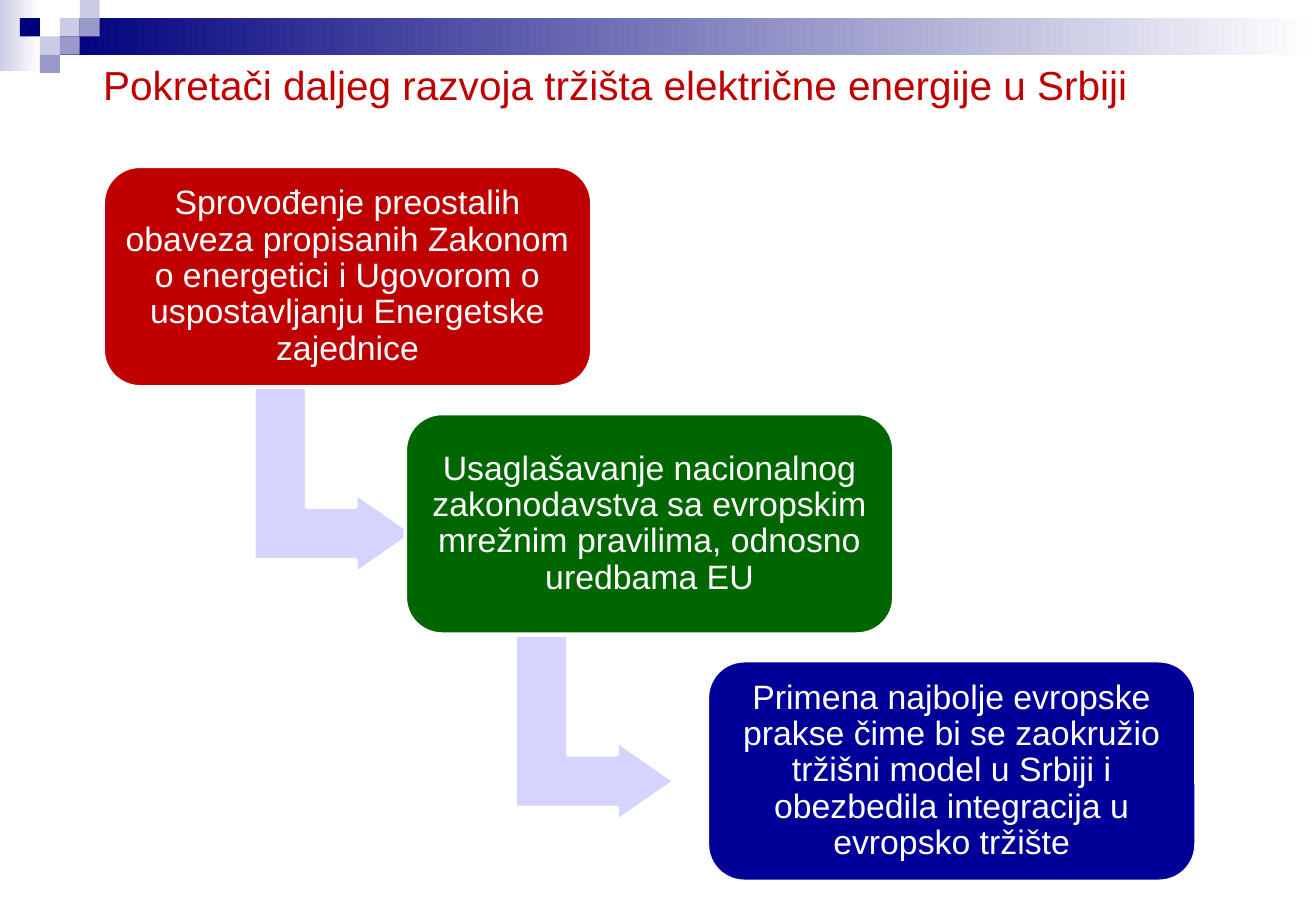
from dataclasses import dataclass

import pptx
import pptx.dml.color
import pptx.enum.shapes
import pptx.enum.text
import pptx.util
from pptx.shapes.autoshape import Shape
from pptx.slide import Slide
from pptx.text.text import TextFrame

SHAPES = pptx.enum.shapes.MSO_SHAPE
SLIDE_W = pptx.util.Inches(10.83)
SLIDE_H = pptx.util.Inches(7.5)
COLS, ROWS = 66, 50


@dataclass(frozen=True)
class Theme:
    font: str = "Arial"
    title_size: int = 24
    step_size: int = 20
    outline: int = 2
    white: str = "FFFFFF"
    navy: str = "00007D"
    pale: str = "CCCCE6"
    mid: str = "9999CC"
    red: str = "C00000"
    green: str = "006600"
    blue: str = "000099"
    arrow: str = "D4D4FF"


@dataclass(frozen=True)
class Cell:
    col: float
    row: float
    cols: float = 1
    rows: float = 1

    def shifted(self, cols: float, rows: float) -> "Cell":
        return Cell(self.col + cols, self.row + rows, self.cols, self.rows)

    def frame(self) -> tuple[int, int, int, int]:
        return (
            round(SLIDE_W * self.col / COLS),
            round(SLIDE_H * self.row / ROWS),
            round(SLIDE_W * self.cols / COLS),
            round(SLIDE_H * self.rows / ROWS),
        )


@dataclass(frozen=True)
class Tile:
    cell: Cell
    color: str
    fade_to: str | None = None


@dataclass(frozen=True)
class Step:
    text: str
    color: str


THEME = Theme()

TITLE = "Pokretači daljeg razvoja tržišta električne energije u Srbiji"
TITLE_CELL = Cell(4.57, 3.47, 59.4, 2.27)

TILES = [
    Tile(Cell(0, 0, 2, 3.9), THEME.pale, THEME.white),
    Tile(Cell(3, 1, 63, 2), THEME.navy, THEME.white),
    Tile(Cell(3, 1), THEME.pale),
    Tile(Cell(4, 0), THEME.pale),
    Tile(Cell(4, 1), THEME.mid),
    Tile(Cell(2, 2), THEME.pale),
    Tile(Cell(1, 1), THEME.navy),
    Tile(Cell(3, 2), THEME.mid),
    Tile(Cell(2, 3), THEME.mid),
]

STEPS = [
    Step(
        "Sprovođenje preostalih obaveza propisanih Zakonom o energetici "
        "i Ugovorom o uspostavljanju Energetske zajednice",
        THEME.red,
    ),
    Step(
        "Usaglašavanje nacionalnog zakonodavstva sa evropskim mrežnim "
        "pravilima, odnosno uredbama EU",
        THEME.green,
    ),
    Step(
        "Primena najbolje evropske prakse čime bi se zaokružio tržišni model "
        "u Srbiji i obezbedila integracija u evropsko tržište",
        THEME.blue,
    ),
]
FIRST_STEP = Cell(5.18, 9.13, 24.5, 12.1)
STEP_SHIFT = (15.15, 13.57)
FIRST_ARROW = Cell(12.07, 22, 9.32, 8.73)
ARROW_SHIFT = (13.1, 13.6)
ARROW_ADJUSTMENTS = (0.33, 0.25, 0.36)


def rgb(color: str) -> pptx.dml.color.RGBColor:
    return pptx.dml.color.RGBColor.from_string(color)


def add_block(s: Slide, kind: SHAPES, cell: Cell, color: str) -> Shape:
    sp = s.shapes.add_shape(kind, *cell.frame())
    sp.shadow.inherit = False
    sp.fill.solid()
    sp.fill.fore_color.rgb = rgb(color)
    sp.line.fill.background()
    return sp


def add_outlined(s: Slide, kind: SHAPES, cell: Cell, color: str) -> Shape:
    sp = add_block(s, kind, cell, color)
    sp.line.color.rgb = rgb(THEME.white)
    sp.line.width = pptx.util.Pt(THEME.outline)
    return sp


def set_text(tf: TextFrame, text: str, size: int, color: str) -> None:
    tf.word_wrap = True
    tf.vertical_anchor = pptx.enum.text.MSO_ANCHOR.MIDDLE
    p = tf.paragraphs[0]
    p.text = text
    p.font.name = THEME.font
    p.font.size = pptx.util.Pt(size)
    p.font.color.rgb = rgb(color)


def add_tile(s: Slide, tile: Tile) -> None:
    sp = add_block(s, SHAPES.RECTANGLE, tile.cell, tile.color)
    if tile.fade_to:
        sp.fill.gradient()
        sp.fill.gradient_angle = 0
        for stop, color in zip(sp.fill.gradient_stops, (tile.color, tile.fade_to)):
            stop.color.rgb = rgb(color)


def add_title(s: Slide) -> None:
    sp = s.shapes.add_textbox(*TITLE_CELL.frame())
    set_text(sp.text_frame, TITLE, THEME.title_size, THEME.red)


def add_arrow(s: Slide, cell: Cell) -> None:
    sp = add_outlined(s, SHAPES.BENT_UP_ARROW, cell, THEME.arrow)
    sp.rotation = 90
    for i, value in enumerate(ARROW_ADJUSTMENTS):
        sp.adjustments[i] = value


def add_step(s: Slide, step: Step, cell: Cell) -> None:
    sp = add_outlined(s, SHAPES.ROUNDED_RECTANGLE, cell, step.color)
    tf = sp.text_frame
    inset = pptx.util.Inches(0.08)
    tf.margin_left = tf.margin_right = tf.margin_top = tf.margin_bottom = inset
    set_text(tf, step.text, THEME.step_size, THEME.white)
    p = tf.paragraphs[0]
    p.alignment = pptx.enum.text.PP_ALIGN.CENTER
    p.line_spacing = 0.9


def main() -> None:
    prs = pptx.Presentation()
    prs.slide_width = SLIDE_W
    prs.slide_height = SLIDE_H
    s = prs.slides.add_slide(prs.slide_layouts[6])
    for tile in TILES:
        add_tile(s, tile)
    add_title(s)
    for i, step in enumerate(STEPS):
        if i < len(STEPS) - 1:
            add_arrow(s, FIRST_ARROW.shifted(*(i * d for d in ARROW_SHIFT)))
        add_step(s, step, FIRST_STEP.shifted(*(i * d for d in STEP_SHIFT)))
    prs.save("out.pptx")


if __name__ == "__main__":
    main()
